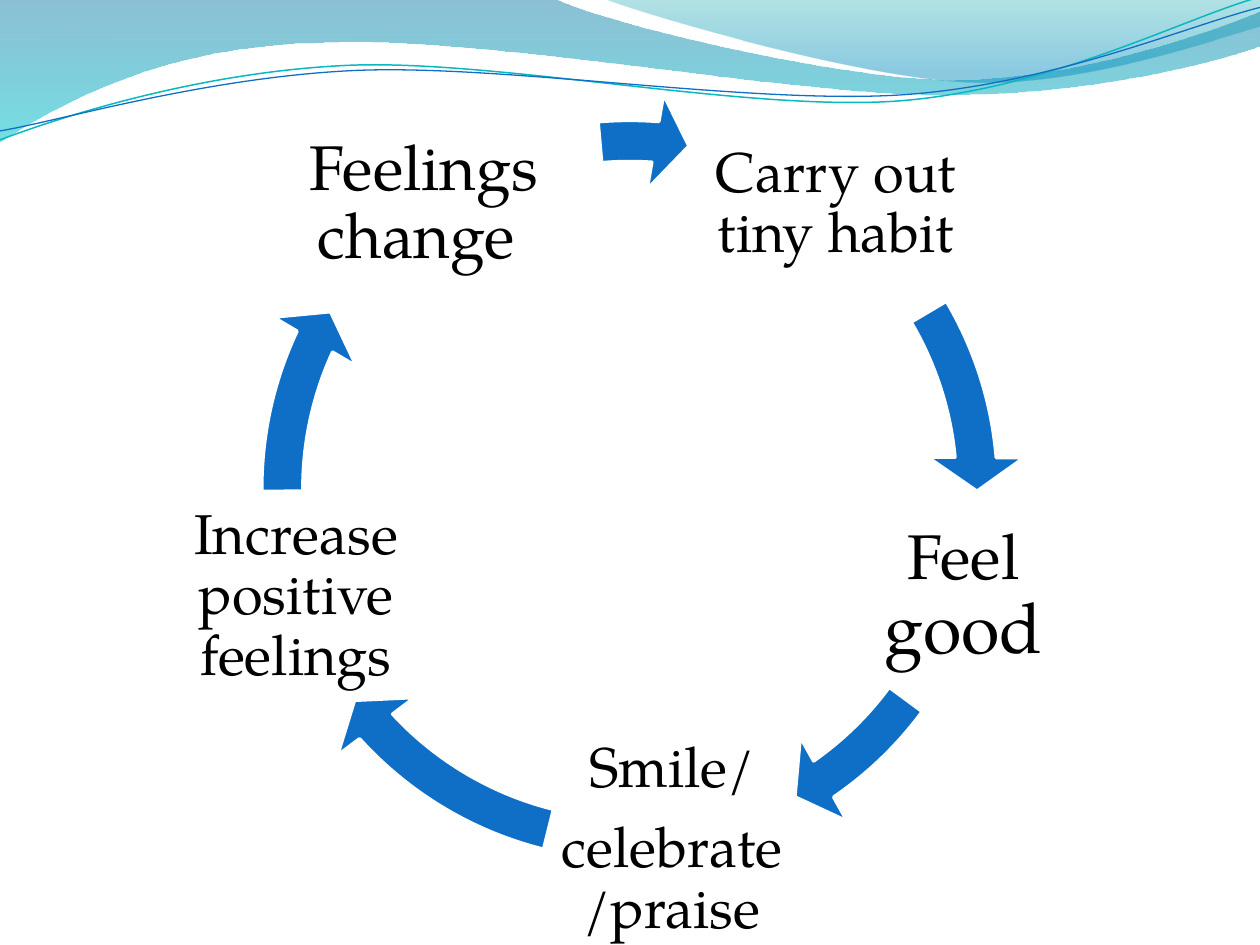
from lxml import etree
from pptx import Presentation
from pptx import util as u
from pptx.dml import color
from pptx.enum import shapes, text
from pptx.oxml import ns

FONT = "TeX Gyre Pagella"
COLORS = {"blue": "0F6FC6", "teal": "0AB8BF", "white": "FFFFFF", "black": "000000"}

# Each outline is a start point, then lines (x, y) and cubic curves (x1, y1, x2, y2, x, y), in cm.
WAVES = [
    {"outline": [(0, -0.03), (11.18, -0.03), (12.09, 0.43, 16.87, 1.6, 19.25, 1.6),
                 (21.67, 1.6, 24.33, 0.66, 25.4, 0.23), (25.43, 0.91),
                 (24.97, 1.12, 22.1, 1.93, 18.95, 1.91), (15.8, 1.91, 9.7, 0.71, 6.53, 0.86),
                 (3.28, 0.89, 1.17, 2.11, -0.03, 2.87), (0, -0.03)],
     "stops": [(0, "0074A1", 45), (1, "00C6CF", 55)]},
    {"outline": [(12.17, -0.03), (12.93, 0.28, 17.32, 1.57, 19.53, 1.65),
                 (21.74, 1.75, 24.41, 0.81, 25.4, 0.53), (25.4, 0), (12.17, -0.03)],
     "stops": [(0, "00A1A9", 30), (0.8, "008BBF", 45)]},
]
RIPPLE_TURN = 357.3
RIPPLES = [
    {"outline": [(-0.05, 2.22), (1.19, 1.82, 4.02, 1.04, 7.05, 1.05),
                 (10.05, 1.07, 15.02, 2.37, 18.08, 2.29),
                 (21.13, 2.2, 23.87, 0.91, 25.41, 0.55)],
     "color": "teal", "width": 0.85},
    {"outline": [(-0.04, 2.04), (1.16, 1.9, 4.18, 1.15, 7.2, 1.16),
                 (10.2, 1.18, 15.13, 2.23, 18.18, 2.17),
                 (21.21, 2.1, 23.93, 1.06, 25.45, 0.75)],
     "color": "blue", "width": 0.75},
]

# Label boxes and arrow offsets are in cm from the cycle's corner, arrow angles in degrees.
LABEL_HEIGHT = 4.24
STEPS = [
    {"label": (9.19, 0.13, 5.89), "inset": 0.1, "paras": [[("Carry out tiny habit", 32)]],
     "arrow": (0, 0), "angles": (329.43, 354.89)},
    {"label": (12.58, 8.04, 4.24), "inset": 0.13, "paras": [[("Feel ", 36), ("good", 40)]],
     "arrow": (-0.07, 0.1), "angles": (36.4, 55.35)},
    {"label": (6.33, 12.94, 5), "inset": 0.1,
     "paras": [[("Smile/", 32)], [("celebrate/praise", 32)]],
     "arrow": (0.06, 0.08), "angles": (104.01, 137.61)},
    {"label": (-1.44, 8.04, 5.38), "inset": 0.1, "paras": [[("Increase positive feelings", 32)]],
     "arrow": (0, 0), "angles": (179.51, 204.97)},
    {"label": (0.28, 0.13, 7.09), "inset": 0.13, "paras": [[("Feelings change ", 36)]],
     "arrow": (0, 0), "angles": (265.07, 274.23)},
]


def rgb(name):
    return color.RGBColor.from_string(COLORS.get(name, name))


def add_outline(page, box, outline, close):
    """Draw through all points, then join each curve's three points into one Bézier segment."""
    left, top = box[:2]
    points = [(u.Cm(left + segment[i]), u.Cm(top + segment[i + 1]))
              for segment in outline for i in range(0, len(segment), 2)]
    builder = page.shapes.build_freeform(*points[0], scale=1.0)
    builder.add_line_segments(points[1:], close=close)
    shape = builder.convert_to_shape()
    shape.shadow.inherit = False
    lines = iter(list(shape.element.spPr.iter(ns.qn("a:lnTo"))))
    for segment in outline[1:]:
        first = next(lines)
        if len(segment) == 2:
            continue
        curve = etree.Element(ns.qn("a:cubicBezTo"))
        first.addprevious(curve)
        for line in (first, next(lines), next(lines)):
            curve.append(line[0])
            line.getparent().remove(line)
    return shape


def fill_gradient(shape, stops):
    """Fill from top to bottom; stops hold position, colour and opacity in percent."""
    shape.fill.gradient()
    shape.fill.gradient_angle = 270
    for stop, (position, hex_color, _) in zip(shape.fill.gradient_stops, stops):
        stop.position = position
        stop.color.rgb = rgb(hex_color)
    found = list(shape.element.spPr.iter(ns.qn("a:srgbClr")))
    for element, (_, _, opacity) in zip(found, stops):
        etree.SubElement(element, ns.qn("a:alpha")).set("val", str(opacity * 1000))


def add_waves(page, box):
    for wave in WAVES:
        shape = add_outline(page, box, wave["outline"], close=True)
        fill_gradient(shape, wave["stops"])
        shape.line.fill.background()
    for ripple in RIPPLES:
        shape = add_outline(page, box, ripple["outline"], close=False)
        shape.rotation = RIPPLE_TURN
        shape.fill.background()
        shape.line.color.rgb = rgb(ripple["color"])
        shape.line.width = u.Pt(ripple["width"])


def add_label(page, box, inset, paras):
    frame = page.shapes.add_textbox(*(u.Cm(length) for length in box)).text_frame
    frame.word_wrap = True
    frame.vertical_anchor = text.MSO_ANCHOR.MIDDLE
    frame.margin_left = frame.margin_right = u.Cm(inset)
    frame.margin_top = frame.margin_bottom = u.Cm(inset)
    for index, spans in enumerate(paras):
        para = frame.add_paragraph() if index else frame.paragraphs[0]
        para.alignment = text.PP_ALIGN.CENTER
        para.line_spacing = 0.9
        para.space_after = u.Pt(11)
        for words, size in spans:
            span = para.add_run()
            span.text = words
            span.font.name = FONT
            span.font.size = u.Pt(size)
            span.font.color.rgb = rgb("black")


def add_arrow(page, box, angles):
    arrow = page.shapes.add_shape(shapes.MSO_SHAPE.CIRCULAR_ARROW,
                                  *(u.Cm(length) for length in box))
    start, end = angles
    # One degree is 0.6 in adjustment units.
    values = (0.052, 5.6 * 0.6, end * 0.6, start * 0.6, 0.061)
    for index, value in enumerate(values):
        arrow.adjustments[index] = value
    arrow.shadow.inherit = False
    arrow.fill.solid()
    arrow.fill.fore_color.rgb = rgb("blue")
    arrow.line.color.rgb = rgb("white")
    arrow.line.width = u.Pt(2)


def add_cycle(page, box):
    left, top, width, height = box
    for step in STEPS:
        x, y, label_width = step["label"]
        label_box = (left + x, top + y, label_width, LABEL_HEIGHT)
        add_label(page, label_box, step["inset"], step["paras"])
        x, y = step["arrow"]
        add_arrow(page, (left + x, top + y, width, height), step["angles"])


def main():
    deck = Presentation()
    deck.slide_width, deck.slide_height = u.Cm(25.4), u.Cm(19.05)
    page = deck.slides.add_slide(deck.slide_layouts[6])
    page.background.fill.solid()
    page.background.fill.fore_color.rgb = rgb("white")
    add_waves(page, (0, 0, 25.4, 2.87))
    add_cycle(page, (4.72, 1.87, 15.95, 15.95))
    deck.save("out.pptx")


if __name__ == "__main__":
    main()
